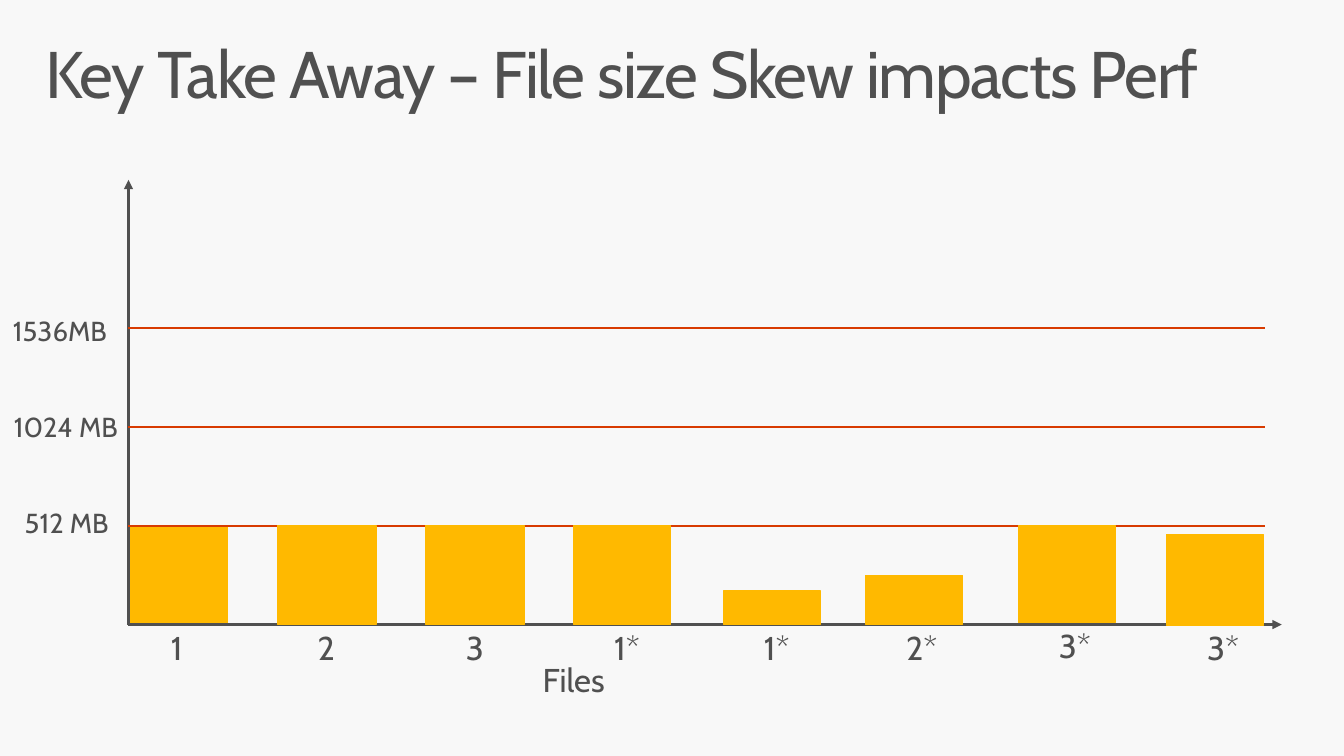
from typing import NamedTuple

from lxml.etree import SubElement
from pptx import Presentation
from pptx.dml.color import RGBColor
from pptx.enum.shapes import MSO_CONNECTOR, MSO_SHAPE
from pptx.enum.text import MSO_ANCHOR, PP_ALIGN
from pptx.oxml.ns import qn
from pptx.util import Inches, Pt

BACKGROUND = RGBColor(0xF8, 0xF8, 0xF8)
INK = RGBColor(0x50, 0x50, 0x50)
BAR_FILL = RGBColor(0xFF, 0xB9, 0x00)
LIMIT_RED = RGBColor(0xD8, 0x3B, 0x01)
FONT = "Cabin"

SLIDE_WIDTH, SLIDE_HEIGHT = 13.6, 7.65
ORIGIN_X, ORIGIN_Y = 1.3, 6.32
COLUMN, ROW = 1.5, 1.0
BAR_INDENT = 0.02
LABEL_INDENT = 0.21


class FileBar(NamedTuple):
    label: str
    column: float
    rows: float
    width: float = 0.98
    lift: float = 0


FILE_BARS = [
    FileBar("1", 0, 1),
    FileBar("2", 0.99, 1, width=1),
    FileBar("3", 1.99, 1, width=1),
    FileBar("1*", 2.99, 1),
    FileBar("1*", 4, 0.34),
    FileBar("2*", 4.96, 0.5),
    FileBar("3*", 5.99, 0.98, lift=0.02),
    FileBar("3*", 6.99, 0.92, lift=-0.01),
]
SIZE_LABELS = [("512 MB", 0.05, 1.55), ("1024 MB", -0.06, 1.88), ("1536MB", -0.07, 1.88)]


def row_y(row):
    return ORIGIN_Y - row * ROW


def bar_left(bar):
    return ORIGIN_X + BAR_INDENT + bar.column * COLUMN


def add_text(slide, text, left, top, width, height, size,
             insets=(0.2, 0.16), align=PP_ALIGN.LEFT, wrap=True, space_after=6):
    box = slide.shapes.add_textbox(Inches(left), Inches(top), Inches(width), Inches(height))
    frame = box.text_frame
    frame.text = text
    frame.word_wrap = wrap
    frame.vertical_anchor = MSO_ANCHOR.TOP
    frame.margin_left = frame.margin_right = Inches(insets[0])
    frame.margin_top = frame.margin_bottom = Inches(insets[1])
    paragraph = frame.paragraphs[0]
    paragraph.alignment = align
    paragraph.line_spacing = 0.9
    paragraph.space_after = Pt(space_after)
    font = paragraph.runs[0].font
    font.name = FONT
    font.size = Pt(size)
    font.color.rgb = INK
    return paragraph.runs[0]


def add_title(slide, text):
    run = add_text(slide, text, 0.3, 0.32, 13, 1, 48, insets=(0.16, 0.1), space_after=0)
    run.font._element.set("spc", "-100")


def add_line(slide, start, end, color, weight, arrow=False):
    line = slide.shapes.add_connector(MSO_CONNECTOR.STRAIGHT, *map(Inches, start + end))
    line.line.color.rgb = color
    line.line.width = Pt(weight)
    if arrow:
        SubElement(line.line._get_or_add_ln(), qn("a:tailEnd"), type="triangle")
    SubElement(line._element.spPr, qn("a:effectLst"))


def add_bar(slide, bar):
    top = row_y(bar.rows + bar.lift)
    block = slide.shapes.add_shape(
        MSO_SHAPE.RECTANGLE, Inches(bar_left(bar)), Inches(top),
        Inches(bar.width), Inches(bar.rows * ROW))
    block.shadow.inherit = False
    block.fill.solid()
    block.fill.fore_color.rgb = BAR_FILL
    block.line.color.rgb = BAR_FILL
    block.line.width = Pt(0.85)


def add_bar_label(slide, bar):
    width = 0.58 if len(bar.label) == 1 else 0.77
    top = row_y(0.08 + max(bar.lift, 0))
    add_text(slide, bar.label, bar_left(bar) + LABEL_INDENT, top, width, 0.69, 24, wrap=False)


def add_axes(slide):
    origin = (ORIGIN_X, ORIGIN_Y)
    for tip in ((ORIGIN_X, row_y(4.5)), (12.97, ORIGIN_Y)):
        add_line(slide, origin, tip, INK, 2.25, arrow=True)


def add_size_limits(slide):
    for row, (label, left, width) in enumerate(SIZE_LABELS, start=1):
        add_line(slide, (ORIGIN_X, row_y(row)), (12.8, row_y(row)), LIMIT_RED, 1.5)
        add_text(slide, label, left, 5.98 - 0.97 * row, width, 0.63, 20)


def main():
    presentation = Presentation()
    presentation.slide_width = Inches(SLIDE_WIDTH)
    presentation.slide_height = Inches(SLIDE_HEIGHT)
    slide = presentation.slides.add_slide(presentation.slide_layouts[6])
    slide.background.fill.solid()
    slide.background.fill.fore_color.rgb = BACKGROUND

    first_bar, *later_bars = FILE_BARS
    add_bar(slide, first_bar)
    add_title(slide, "Key Take Away – File size Skew impacts Perf")
    add_axes(slide)
    add_size_limits(slide)
    for bar in later_bars:
        add_bar(slide, bar)
    for bar in FILE_BARS:
        add_bar_label(slide, bar)
    add_text(slide, "Files", 3.68, 6.56, 4.25, 0.69, 24, align=PP_ALIGN.CENTER)
    presentation.save("out.pptx")


if __name__ == "__main__":
    main()
